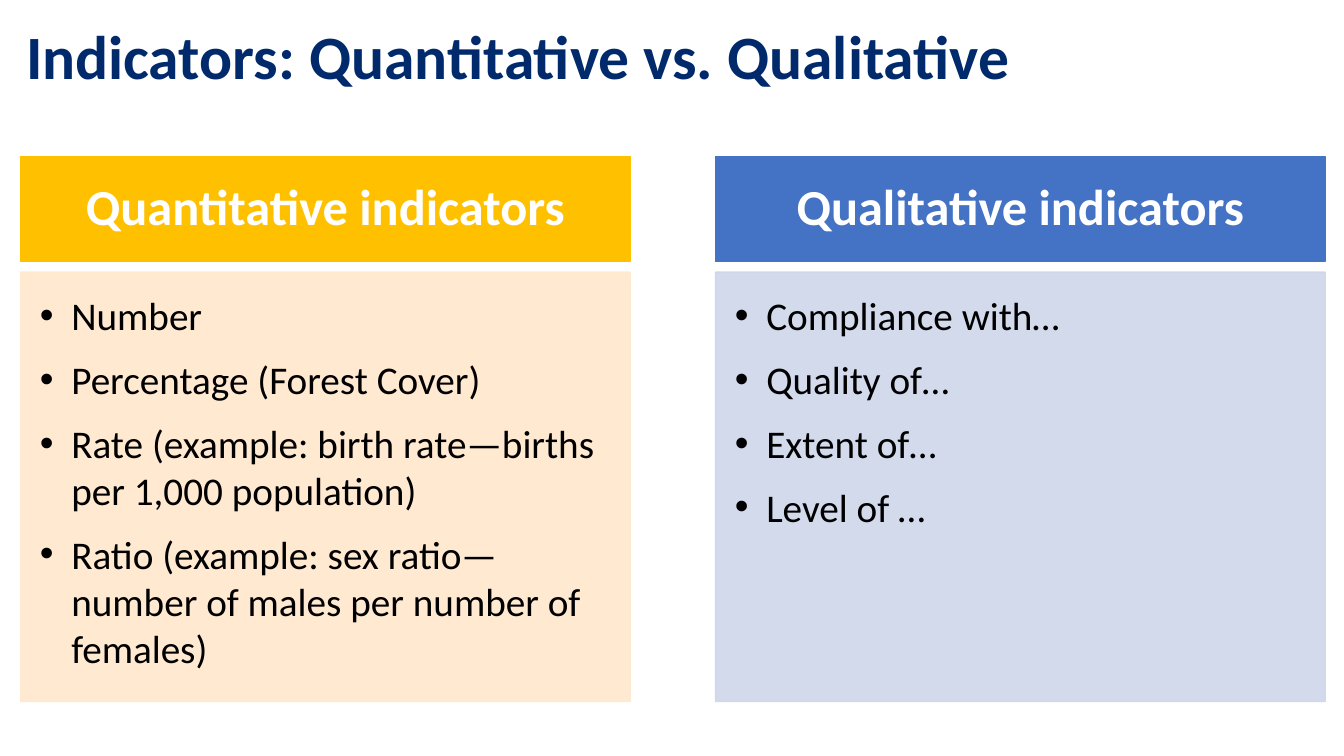
from lxml import etree
from pptx import Presentation
from pptx.dml.color import RGBColor
from pptx.enum.shapes import MSO_SHAPE
from pptx.enum.text import MSO_ANCHOR, PP_ALIGN
from pptx.oxml.ns import qn
from pptx.util import Pt

RECTANGLE = MSO_SHAPE.RECTANGLE
TOP, MIDDLE = MSO_ANCHOR.TOP, MSO_ANCHOR.MIDDLE
LEFT, CENTER = PP_ALIGN.LEFT, PP_ALIGN.CENTER

NAVY = RGBColor(0x00, 0x2A, 0x6C)
WHITE = RGBColor(0xFF, 0xFF, 0xFF)
BLACK = RGBColor(0x00, 0x00, 0x00)
GOLD = RGBColor(0xFF, 0xC0, 0x00)
PEACH = RGBColor(0xFF, 0xE8, 0xCC)
BLUE = RGBColor(0x44, 0x72, 0xC4)
PALE_BLUE = RGBColor(0xCF, 0xD6, 0xEA)

FONT = "Calibri"
COLUMN_WIDTH = 435.4
COLUMN_LEFT = 14.8
COLUMN_STEP = 496.4
INDENT = 22.5

COLUMNS = [
    ("Quantitative indicators", GOLD, PEACH, [
        "Number",
        "Percentage (Forest Cover)",
        "Rate (example: birth rate—births per 1,000 population)",
        "Ratio (example: sex ratio—number of males per number of females)",
    ]),
    ("Qualitative indicators", BLUE, PALE_BLUE, [
        "Compliance with…",
        "Quality of…",
        "Extent of…",
        "Level of …",
    ]),
]


def add_panel(page, left, top, height, color, margins, anchor):
    """Add a filled rectangle and return it, ready for text."""
    panel = page.shapes.add_shape(
        RECTANGLE, Pt(left), Pt(top), Pt(COLUMN_WIDTH), Pt(height))
    panel.shadow.inherit = False
    panel.fill.solid()
    panel.fill.fore_color.rgb = color
    panel.line.color.rgb = color
    panel.line.width = Pt(1)
    frame = panel.text_frame
    frame.word_wrap = True
    frame.vertical_anchor = anchor
    frame.margin_left, frame.margin_top, frame.margin_right, frame.margin_bottom = (
        Pt(margin) for margin in margins)
    return panel


def write(para, text, size, color, bold, align):
    para.text = text
    para.alignment = align
    para.font.name = FONT
    para.font.size = Pt(size)
    para.font.bold = bold
    para.font.color.rgb = color


deck = Presentation()
deck.slide_width = Pt(960)
deck.slide_height = Pt(540)
page = deck.slides.add_slide(deck.slide_layouts[6])

# Title
title = page.shapes.add_textbox(Pt(11.5), Pt(0), Pt(935.3), Pt(85))
title.text_frame.word_wrap = True
title.text_frame.vertical_anchor = MIDDLE
title_para = title.text_frame.paragraphs[0]
title_para.line_spacing = 0.9
write(title_para, "Indicators: Quantitative vs. Qualitative", 44, NAVY, True, LEFT)

for index, (heading, head_color, body_color, items) in enumerate(COLUMNS):
    left = COLUMN_LEFT + index * COLUMN_STEP

    # Column heading
    head = add_panel(page, left, 111.8, 74.9, head_color,
                     (18.7, 10.8, 18.7, 10.8), MIDDLE)
    head_para = head.text_frame.paragraphs[0]
    head_para.line_spacing = 0.9
    write(head_para, heading, 36, WHITE, True, CENTER)

    # Column body, slightly transparent
    body = add_panel(page, left, 194.4, 306.7, body_color,
                     (13.7, 13.7, 18.7, 20.9), TOP)
    for color_element in body._element.spPr.iter(qn("a:srgbClr")):
        etree.SubElement(color_element, qn("a:alpha"), val="90000")

    # Bulleted items
    frame = body.text_frame
    for number, item in enumerate(items):
        para = frame.add_paragraph() if number else frame.paragraphs[0]
        para.space_after = Pt(12)
        properties = para._p.get_or_add_pPr()
        properties.set("marL", str(Pt(INDENT)))
        properties.set("indent", str(-Pt(INDENT)))
        etree.SubElement(properties, qn("a:buFont"), typeface="Arial")
        etree.SubElement(properties, qn("a:buChar"), char="•")
        write(para, item, 28, BLACK, False, LEFT)

deck.save("out.pptx")
